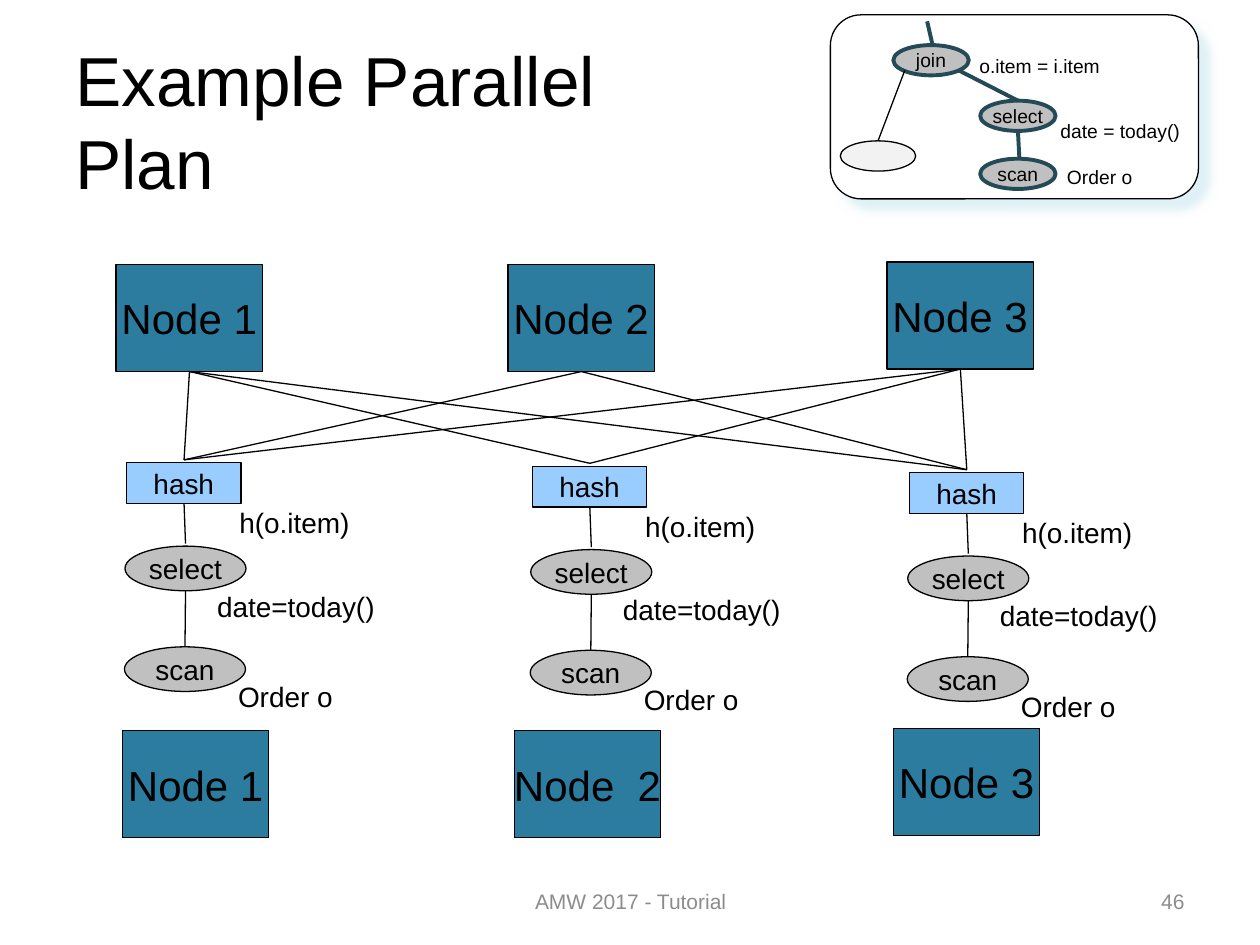
import pptx
import pptx.util
import pptx.dml.color
import pptx.enum.shapes
import pptx.enum.text
import pptx.oxml
import pptx.oxml.ns

Cm = pptx.util.Cm
Pt = pptx.util.Pt
color = pptx.dml.color.RGBColor.from_string
Shape = pptx.enum.shapes.MSO_SHAPE
Align = pptx.enum.text.PP_ALIGN
Anchor = pptx.enum.text.MSO_ANCHOR
AutoSize = pptx.enum.text.MSO_AUTO_SIZE

presentation = pptx.Presentation()
presentation.slide_width = Cm(25.4)
presentation.slide_height = Cm(19.05)
slide = presentation.slides.add_slide(presentation.slide_layouts[6])


def add_item(box, text="", size=16, kind=None, fill="FFFFFF", line="000000", width=0.75,
             ink="000000", align=Align.CENTER, anchor=Anchor.MIDDLE, wrap=False, grow=False):
    lengths = [Cm(value) for value in box]
    if kind is None:
        shape = slide.shapes.add_textbox(*lengths)
    else:
        shape = slide.shapes.add_shape(kind, *lengths)
        shape.shadow.inherit = False
        shape.fill.solid()
        shape.fill.fore_color.rgb = color(fill)
        shape.line.color.rgb = color(line)
        shape.line.width = Pt(width)
    frame = shape.text_frame
    frame_format = {
        "word_wrap": wrap,
        "vertical_anchor": anchor,
        "auto_size": AutoSize.SHAPE_TO_FIT_TEXT if grow else AutoSize.NONE,
    }
    for name, value in frame_format.items():
        setattr(frame, name, value)
    if text:
        paragraph = frame.paragraphs[0]
        paragraph.alignment = align
        run = paragraph.add_run()
        run.text = text
        for name, value in {"name": "Arial", "size": Pt(size)}.items():
            setattr(run.font, name, value)
        run.font.color.rgb = color(ink)
    return shape


def add_line(start, end, line="000000", width=0.75):
    connector = slide.shapes.add_connector(
        pptx.enum.shapes.MSO_CONNECTOR.STRAIGHT, *[Cm(value) for value in (*start, *end)])
    connector.line.color.rgb = color(line)
    connector.line.width = Pt(width)
    properties = connector._element.spPr
    properties.append(properties.makeelement(pptx.oxml.ns.qn("a:effectLst"), {}))


label = {"anchor": Anchor.TOP, "grow": True}
left_label = {**label, "align": Align.LEFT}
oval = {"kind": Shape.OVAL, "fill": "C0C0C0"}
node = {"kind": Shape.RECTANGLE, "fill": "2C7C9F", "size": 24}
footer = {"size": 12, "ink": "8C8C8C", "wrap": True}
bold_line = {"line": "244A58", "width": 2.25}

panel = add_item((16.74, 0.3, 7.42, 3.71), kind=Shape.ROUNDED_RECTANGLE)
effects = panel._element.spPr.find(pptx.oxml.ns.qn("a:effectLst"))
effects.append(pptx.oxml.parse_xml(
    f'<a:outerShdw {pptx.oxml.ns.nsdecls("a")} blurRad="{Pt(5)}" dist="{Pt(8.5)}" '
    'dir="2700000" algn="tl" rotWithShape="0"><a:srgbClr val="D5EDF4">'
    '<a:alpha val="75000"/></a:srgbClr></a:outerShdw>'))

add_item((1.27, 0.84, 13.34, 3.18), "Example Parallel Plan", 39.6, align=Align.LEFT, wrap=True)
add_item((8.69, 17.65, 8.05, 1.02), "AMW 2017 - Tutorial", **footer)
add_item((18.21, 17.65, 5.92, 1.02), "46", align=Align.RIGHT, **footer)

nodes = [
    (2.34, 5.33, "Node 1", "Node 1"),
    (10.24, 5.33, "Node 2", "Node  2"),
    (17.88, 5.28, "Node 3", "Node 3"),
]
for left, top, upper_text, lower_text in nodes:
    add_item((left, top, 2.95, 2.16), upper_text, **node)
    add_item((left + 0.13, top + 9.4, 2.95, 2.16), lower_text, **node)

plans = [(2.55, 9.33), (10.73, 9.4), (18.33, 9.53)]
for left, top in plans:
    for x, y, width, height, text, style in [
        (0, 0, 2.31, 0.82, "hash", {"kind": Shape.RECTANGLE, "fill": "99CCFF"}),
        (-0.03, 1.68, 2.44, 0.9, "select", oval),
        (-0.04, 3.71, 2.44, 0.9, "scan", oval),
        (2, 0.74, 2.77, 0.94, "h(o.item)", label),
        (1.55, 2.42, 3.73, 0.94, "date=today()", label),
        (2, 4.24, 2.44, 0.94, "Order o", left_label),
    ]:
        add_item((left + x, top + y, width, height), text, **style)
    add_line((left + 1.19, top + 1.63), (left + 1.16, top + 0.82))
    add_line((left + 1.18, top + 3.71), (left + 1.19, top + 2.58))
    for node_left, node_top, *names in nodes:
        if (left, node_left) != (plans[1][0], nodes[1][0]):
            add_line((left + 1.16, top - 0.06), (node_left + 1.48, node_top + 2.16))

for left, top, text in [(18.01, 0.91, "join"), (19.76, 2.03, "select"), (19.76, 3.2, "scan")]:
    add_item((left, top, 1.52, 0.61), text, 11, **oval, **bold_line)
add_item((16.94, 2.84, 1.52, 0.61), kind=Shape.OVAL, fill="F2F2F2")
for left, top, width, text, style in [
    (19.46, 0.97, 3, "o.item = i.item", label),
    (21.06, 2.29, 3.05, "date = today()", label),
    (21.26, 3.2, 1.83, "Order o", left_label),
]:
    add_item((left, top, width, 0.74), text, 11, **style)
add_line((17.7, 2.84), (18.24, 1.42))
for start, end in [
    ((20.52, 2.03), (19.33, 1.42)),
    ((20.55, 3.2), (20.52, 2.64)),
    ((18.8, 0.91), (18.69, 0.43)),
]:
    add_line(start, end, **bold_line)

presentation.save("out.pptx")
